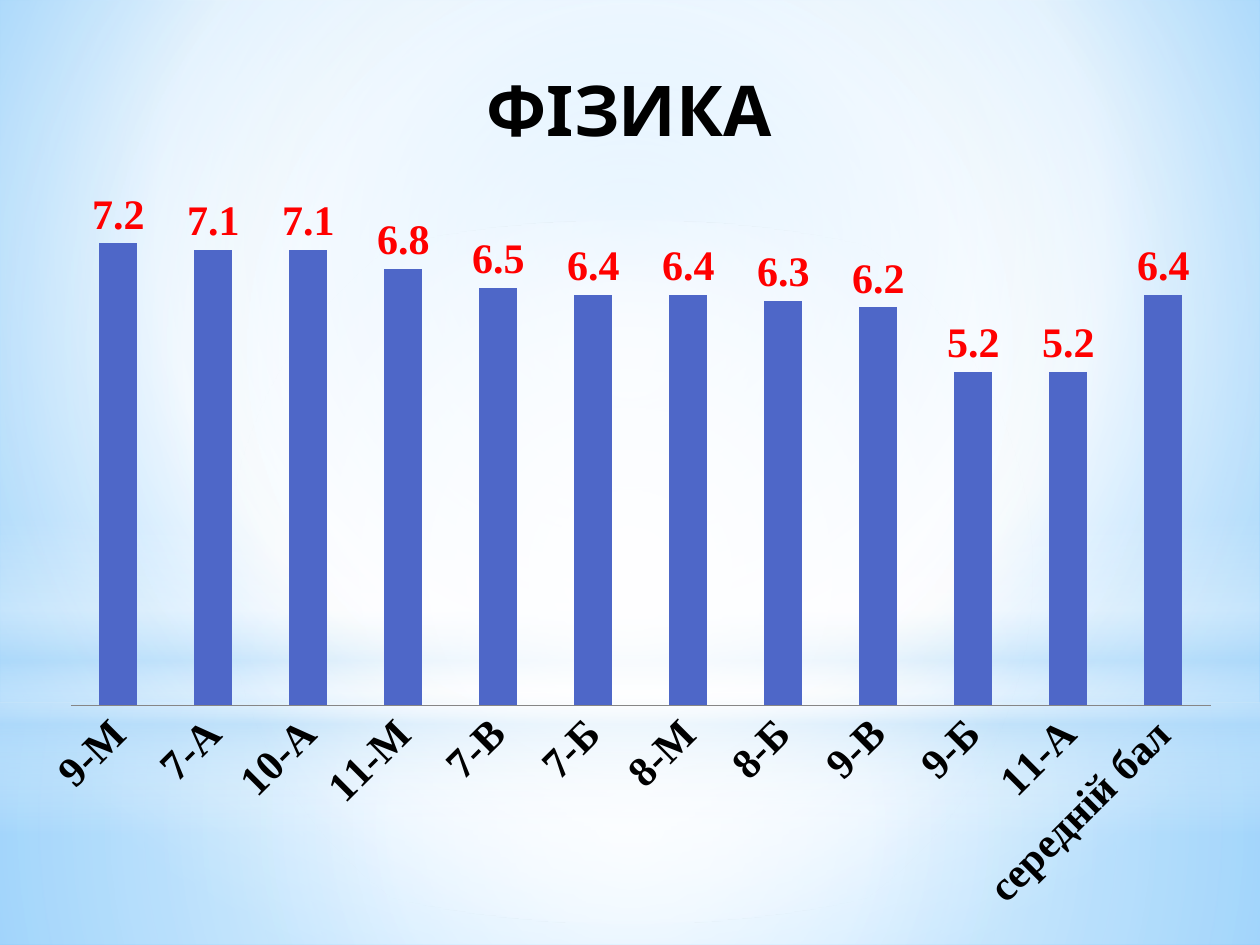
from lxml import etree
from pptx import Presentation
from pptx.chart.data import CategoryChartData
from pptx.dml.color import RGBColor
from pptx.enum.chart import XL_CHART_TYPE as ChartType, XL_LABEL_POSITION as LabelPosition
from pptx.enum.chart import XL_TICK_MARK as TickMark
from pptx.enum.shapes import MSO_SHAPE as Shape
from pptx.oxml import parse_xml
from pptx.oxml.ns import nsdecls, qn
from pptx.util import Cm, Pt

WIDTH, HEIGHT = 25.4, 19.05
CHART_WIDTH, CHART_HEIGHT = 24.4, 18.2
GRADES = {
    "9-М": 7.2, "7-А": 7.1, "10-А": 7.1, "11-М": 6.8, "7-В": 6.5, "7-Б": 6.4,
    "8-М": 6.4, "8-Б": 6.3, "9-В": 6.2, "9-Б": 5.2, "11-А": 5.2, "середній бал": 6.4,
}
CENTRE = (50, 50, 50, 50)


def color(hex_text):
    return RGBColor.from_string(hex_text)


def format_font(font, size, ink, name, bold=True):
    font.size, font.bold, font.name = Pt(size), bold, name
    font.color.rgb = color(ink)


def set_gradient(holder, stops, focus=None):
    """Fill the gradient in holder from (position, colour, opacity) stops in percent.

    With a focus (left, top, right, bottom) it is circular, otherwise it runs downwards.
    """
    gradient = holder.xpath(".//a:gradFill")[0]
    for child in list(gradient):
        gradient.remove(child)
    stop_list = etree.SubElement(gradient, qn("a:gsLst"))
    for position, ink, opacity in stops:
        stop = etree.SubElement(stop_list, qn("a:gs"), pos=str(position * 1000))
        tint = etree.SubElement(stop, qn("a:srgbClr"), val=ink)
        if opacity < 100:
            etree.SubElement(tint, qn("a:alpha"), val=str(opacity * 1000))
    if focus:
        circle = etree.SubElement(gradient, qn("a:path"), path="circle")
        sides = {side: str(part * 1000) for side, part in zip("ltrb", focus)}
        etree.SubElement(circle, qn("a:fillToRect"), **sides)
    else:
        etree.SubElement(gradient, qn("a:lin"), ang="5400000", scaled="0")


def set_layout(element, index, **lengths):
    """Place a chart part by centimetres from the corner of the chart."""
    for old in element.findall(qn("c:layout")):
        element.remove(old)
    layout = parse_xml(f"<c:layout {nsdecls('c')}/>")
    manual = etree.SubElement(layout, qn("c:manualLayout"))
    if "w" in lengths:
        etree.SubElement(manual, qn("c:layoutTarget"), val="inner")
    for side in "xy":
        etree.SubElement(manual, qn(f"c:{side}Mode"), val="edge")
    for side, length in lengths.items():
        whole = CHART_WIDTH if side in "xw" else CHART_HEIGHT
        etree.SubElement(manual, qn(f"c:{side}"), val=str(length / whole))
    element.insert(index, layout)


class GradeSlide:
    font = "Karla"
    label_font = "Times New Roman"
    ink, accent, bar, axis = "000000", "FF0000", "4E67C8", "868686"

    def __init__(self, deck):
        self.slide = deck.slides.add_slide(deck.slide_layouts[6])

    def background(self, stops, focus):
        self.slide.background.fill.gradient()
        set_gradient(self.slide.element.xpath(".//p:bgPr")[0], stops, focus)

    def glow(self, kind, top, height, stops, focus=None):
        """Add a full-width translucent layer."""
        shape = self.slide.shapes.add_shape(kind, 0, Cm(top), Cm(WIDTH), Cm(height))
        shape.shadow.inherit = False
        shape.line.fill.background()
        shape.fill.gradient()
        set_gradient(shape.element, stops, focus)

    def column_chart(self, title, grades, left, top):
        data = CategoryChartData(number_format="0.0")
        data.categories = list(grades)
        data.add_series("Series 1", list(grades.values()))
        frame = self.slide.shapes.add_chart(
            ChartType.COLUMN_CLUSTERED, Cm(left), Cm(top),
            Cm(CHART_WIDTH), Cm(CHART_HEIGHT), data)
        chart = frame.chart
        format_font(chart.font, 10, self.ink, self.font, bold=False)
        chart.has_legend = False
        self.style_title(chart, title)
        self.style_axes(chart)
        self.style_columns(chart.plots[0])
        set_layout(chart.element.xpath(".//c:plotArea")[0], 0, x=0.93, y=3.34, w=22.98, h=10.35)

    def style_title(self, chart, title):
        chart.has_title = True
        para = chart.chart_title.text_frame.paragraphs[0]
        span = para.add_run()
        span.text = title
        format_font(span.font, 40, self.ink, self.font)
        set_layout(chart.element.xpath(".//c:title")[0], 1, x=9.05, y=0.51)

    def style_axes(self, chart):
        values, categories = chart.value_axis, chart.category_axis
        values.minimum_scale, values.maximum_scale = 0, 8
        values.has_major_gridlines = False
        values.visible = False
        categories.major_tick_mark = categories.minor_tick_mark = TickMark.NONE
        categories.format.line.color.rgb = color(self.axis)
        categories.format.line.width = Pt(0.75)
        format_font(categories.tick_labels.font, 24, self.ink, self.label_font)
        chart.element.xpath(".//c:catAx/c:txPr/a:bodyPr")[0].set("rot", "-2700000")

    def style_columns(self, plot):
        plot.gap_width = 150
        plot.vary_by_categories = False
        fill = plot.series[0].format.fill
        fill.solid()
        fill.fore_color.rgb = color(self.bar)
        labels = plot.series[0].data_labels
        labels.show_value = True
        labels.position = LabelPosition.OUTSIDE_END
        format_font(labels.font, 24, self.accent, self.label_font)


def main():
    deck = Presentation()
    deck.slide_width, deck.slide_height = Cm(WIDTH), Cm(HEIGHT)
    page = GradeSlide(deck)
    white, sky = "FFFFFF", "B4DCFA"
    horizon = 14.17

    page.background([(0, "9ED5FF", 100), (60, white, 100), (100, "5BB9FF", 100)],
                    (20, 10, 20, 60))
    page.glow(Shape.RECTANGLE, horizon, HEIGHT - horizon,
              [(0, white, 91), (37, white, 76), (100, sky, 79)], CENTRE)
    page.glow(Shape.RECTANGLE, 0, horizon,
              [(0, white, 89), (48, white, 62), (100, sky, 79)], CENTRE)
    page.glow(Shape.RECTANGLE, 10.46, 6.35,
              [(0, white, 0), (29, white, 30), (45, sky, 40),
               (55, white, 26), (65, sky, 60), (100, white, 0)])
    page.glow(Shape.OVAL, 4.45, horizon, [(0, white, 100), (56, white, 0)], CENTRE)
    page.column_chart("ФІЗИКА", GRADES, 0.5, 0.53)
    deck.save("out.pptx")


if __name__ == "__main__":
    main()
